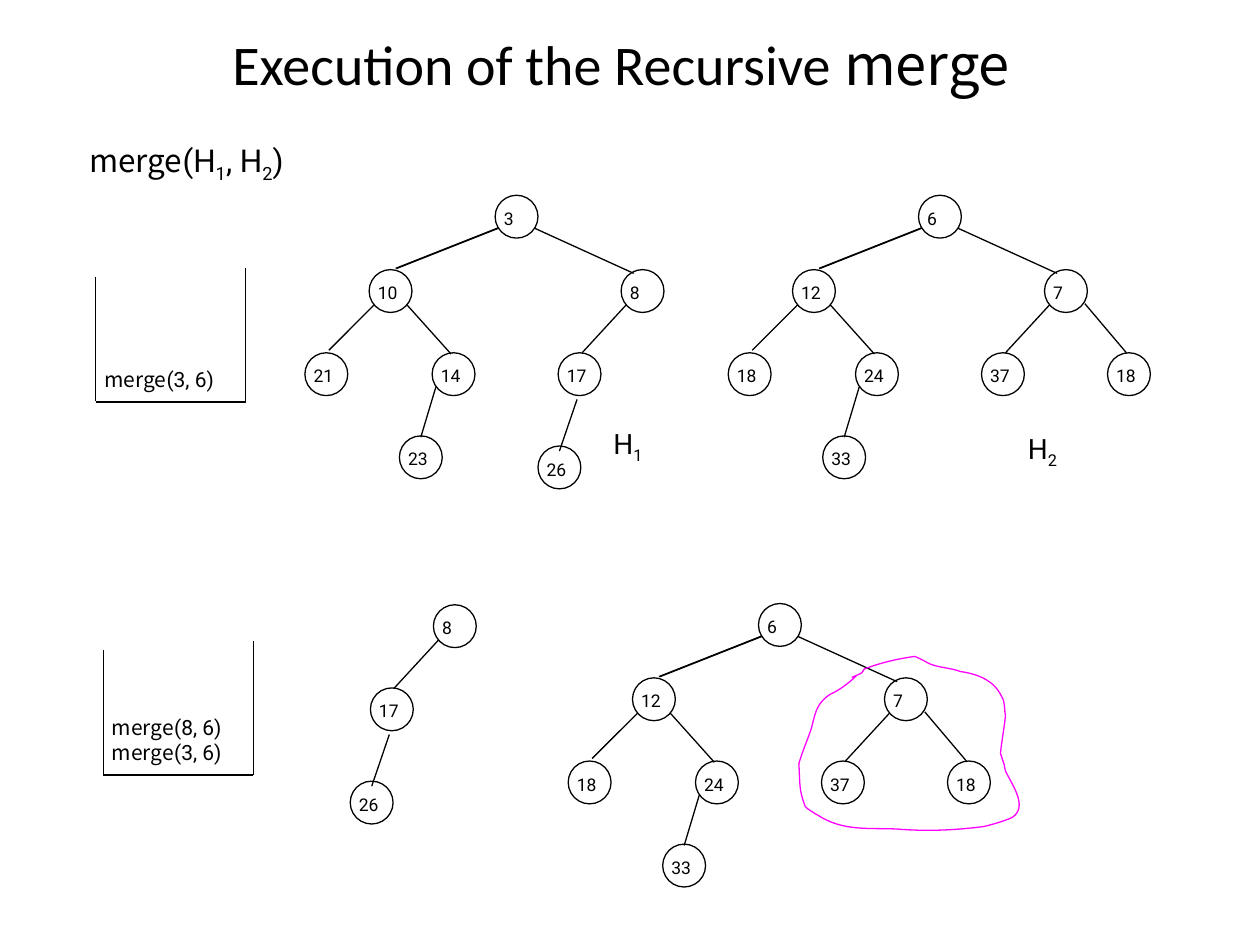
from lxml.etree import SubElement
from pptx import Presentation
from pptx.dml.color import RGBColor
from pptx.enum.shapes import MSO_CONNECTOR as Connector, MSO_SHAPE as Preset
from pptx.enum.text import MSO_ANCHOR as Anchor, MSO_AUTO_SIZE as AutoSize, PP_ALIGN as Align
from pptx.oxml.ns import qn
from pptx.util import Inches, Pt

COLORS = {"ink": "000000", "highlight": "FF00FF"}
SANS = "Roboto"
CODE = "Noto Sans CJK KR"
DIAMETER = 0.34

NODE_OFFSETS = {
    "root": (0, 0),
    "L": (-1, 0.59),
    "R": (1, 0.59),
    "LL": (-1.51, 1.25),
    "LR": (-0.5, 1.25),
    "RL": (0.5, 1.25),
    "RR": (1.5, 1.25),
    "LRL": (-0.76, 1.91),
    "RLL": (0.34, 1.99),
}
EDGES = [
    ("root", "L", (0.03, 0.26), (-0.78, 0.58)),
    ("root", "L", (0.02, 0.26), (-0.79, 0.58)),
    ("root", "R", (0.31, 0.26), (1.1, 0.62)),
    ("L", "LL", (-0.96, 0.87), (-1.32, 1.23)),
    ("L", "LR", (-0.7, 0.87), (-0.35, 1.26)),
    ("R", "RL", (1.04, 0.87), (0.69, 1.25)),
    ("R", "RR", (1.32, 0.86), (1.65, 1.25)),
    ("LR", "LRL", (-0.47, 1.52), (-0.59, 1.92)),
    ("RL", "RLL", (0.65, 1.62), (0.51, 2.03)),
]
H1_RIGHT = {"R": "8", "RL": "17", "RLL": "26"}
H1 = {"root": "3", "L": "10", "LL": "21", "LR": "14", "LRL": "23", **H1_RIGHT}
H2 = {"root": "6", "L": "12", "R": "7", "LL": "18", "LR": "24",
      "RL": "37", "RR": "18", "LRL": "33"}
TREES = [(H1, 3.93, 1.55), (H2, 7.29, 1.55), (H1_RIGHT, 2.44, 4.21), (H2, 6.02, 4.79)]

LOOP_START = (6.8, 5.36)
LOOP_CURVES = [
    (6.74, 5.42, 6.66, 5.48, 6.59, 5.51),
    (6.48, 5.58, 6.47, 5.66, 6.44, 5.78),
    (6.41, 5.87, 6.37, 5.96, 6.34, 6.06),
    (6.35, 6.23, 6.34, 6.27, 6.39, 6.4),
    (6.39, 6.41, 6.47, 6.46, 6.49, 6.47),
    (6.69, 6.6, 6.89, 6.57, 7.12, 6.58),
    (7.35, 6.6, 7.58, 6.59, 7.81, 6.56),
    (7.89, 6.54, 7.96, 6.52, 8.03, 6.49),
    (8.16, 6.41, 8.04, 6.24, 7.99, 6.14),
    (7.98, 6.13, 7.97, 6.08, 7.97, 6.07),
    (7.96, 6.04, 7.94, 5.98, 7.94, 5.98),
    (7.95, 5.88, 7.97, 5.78, 7.98, 5.68),
    (7.97, 5.65, 7.98, 5.57, 7.95, 5.53),
    (7.89, 5.4, 7.76, 5.35, 7.62, 5.33),
    (7.55, 5.3, 7.43, 5.3, 7.36, 5.26),
    (7.33, 5.24, 7.26, 5.21, 7.26, 5.21),
    (7.12, 5.23, 6.99, 5.26, 6.86, 5.31),
    (6.85, 5.32, 6.85, 5.33, 6.84, 5.34),
    (6.83, 5.35, 6.7, 5.4, 6.8, 5.36),
]


def color(name):
    return RGBColor.from_string(COLORS[name])


def style_outline(shape, name):
    shape.shadow.inherit = False
    shape.fill.background()
    shape.line.color.rgb = color(name)
    shape.line.width = Pt(0.75)


def add_runs(paragraph, runs, size):
    paragraph.font.size = Pt(size)
    paragraph.font.color.rgb = color("ink")
    for text, font, *subscript in runs:
        run = paragraph.add_run()
        run.text = text
        run.font.name = font
        if subscript:
            run.font._element.set("baseline", "-25000")


def add_label(shapes, left, top, width, height, runs, size):
    box = shapes.add_textbox(Inches(left), Inches(top), Inches(width), Inches(height))
    frame = box.text_frame
    frame.word_wrap = False
    frame.auto_size = AutoSize.SHAPE_TO_FIT_TEXT
    add_runs(frame.paragraphs[0], runs, size)


def add_line(slide, start, end):
    line = slide.shapes.add_connector(
        Connector.STRAIGHT, *(Inches(value) for value in (*start, *end)))
    line.line.color.rgb = color("ink")
    line.line.width = Pt(0.75)
    SubElement(line._element.spPr, qn("a:effectLst"))


def add_node(slide, left, top, value):
    shapes = slide.shapes.add_group_shape().shapes
    circle = shapes.add_shape(
        Preset.OVAL, Inches(left), Inches(top), Inches(DIAMETER), Inches(DIAMETER))
    style_outline(circle, "ink")
    width = 0.28 if len(value) == 1 else 0.36
    add_label(shapes, left - 0.03, top + 0.05, width, 0.27, [(value, SANS)], 10)


def add_tree(slide, values, left, top):
    for key, value in values.items():
        x, y = NODE_OFFSETS[key]
        add_node(slide, left + x, top + y, value)
    for parent, child, start, end in EDGES:
        if parent in values and child in values:
            add_line(slide, (left + start[0], top + start[1]), (left + end[0], top + end[1]))


def add_call_stack(slide, left, top, calls):
    right, bottom = left + 1.19, top + 0.99
    add_line(slide, (left, top), (left, bottom - 0.01))
    add_line(slide, (left, bottom), (right, bottom))
    add_line(slide, (right, bottom), (right, top - 0.07))
    for level, arguments in enumerate(calls):
        add_label(slide.shapes, left - 0.03, top + 0.66 - 0.2 * level, 1.11, 0.3,
                  [("merge", CODE), (arguments, SANS)], 12)


def add_loop(slide):
    builder = slide.shapes.build_freeform(*(Inches(value) for value in LOOP_START))
    builder.add_line_segments(
        [(Inches(x), Inches(y)) for *_, x, y in LOOP_CURVES], close=True)
    loop = builder.convert_to_shape()
    style_outline(loop, "highlight")
    segments = list(loop._element.iter(qn("a:lnTo")))
    for segment, curve in zip(segments, LOOP_CURVES):
        segment.tag = qn("a:cubicBezTo")
        segment.clear()
        for x, y in zip(curve[::2], curve[1::2]):
            SubElement(segment, qn("a:pt"),
                       x=str(Inches(x) - loop.left), y=str(Inches(y) - loop.top))


def add_title(slide):
    title = slide.shapes.title
    title.left, title.top = Inches(0.68), Inches(0.18)
    title.width, title.height = Inches(8.5), Inches(0.64)
    title.text_frame.vertical_anchor = Anchor.MIDDLE
    paragraph = title.text_frame.paragraphs[0]
    paragraph.alignment = Align.CENTER
    add_runs(paragraph, [("Execution of the Recursive ", "Calibri"), ("merge", CODE)], 32)


def main():
    presentation = Presentation()
    presentation.slide_width, presentation.slide_height = Inches(10), Inches(7.5)
    slide = presentation.slides.add_slide(presentation.slide_layouts[5])
    add_title(slide)
    for values, left, top in TREES:
        add_tree(slide, values, left, top)
    for left, top, number in [(4.77, 3.34, "1"), (8.06, 3.38, "2")]:
        add_label(slide.shapes, left, top, 0.43, 0.37,
                  [("H", SANS), (number, SANS, True)], 16)
    add_label(slide.shapes, 0.61, 1.07, 1.82, 0.4,
              [("merge", CODE), ("(H", SANS), ("1", SANS, True),
               (", H", SANS), ("2", SANS, True), (")", SANS)], 18)
    add_call_stack(slide, 0.76, 2.2, ["(3, 6)"])
    add_call_stack(slide, 0.82, 5.16, ["(3, 6)", "(8, 6)"])
    add_loop(slide)
    presentation.save("out.pptx")


if __name__ == "__main__":
    main()
